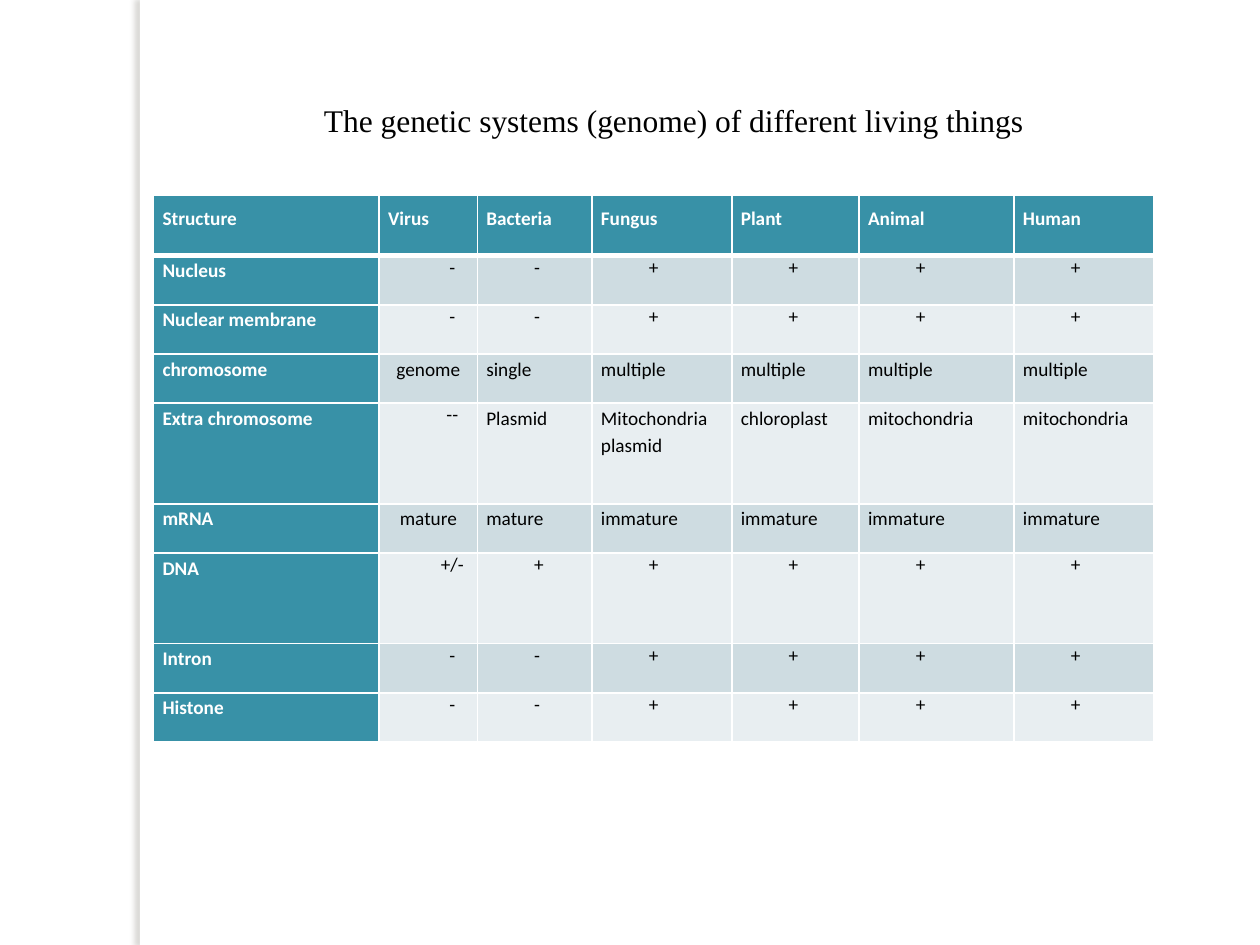
from lxml.etree import SubElement
from pptx import Presentation
from pptx.dml.color import RGBColor
from pptx.enum.shapes import MSO_SHAPE
from pptx.enum.text import MSO_ANCHOR, MSO_AUTO_SIZE, PP_ALIGN
from pptx.oxml import parse_xml
from pptx.oxml.ns import nsdecls, qn
from pptx.util import Inches, Pt

WHITE = RGBColor(0xFF, 0xFF, 0xFF)
BLACK = RGBColor(0x00, 0x00, 0x00)
TEAL = RGBColor(0x38, 0x91, 0xA7)
BAND_DARK = RGBColor(0xCE, 0xDC, 0xE1)
BAND_LIGHT = RGBColor(0xE8, 0xEE, 0xF1)
SHADOW = RGBColor(0x73, 0x6F, 0x63)

COLUMN_WIDTHS = [1.79, 0.78, 0.91, 1.11, 1.01, 1.23, 1.11]
ROW_HEIGHTS = [0.48, 0.39, 0.39, 0.39, 0.8, 0.39, 0.72, 0.39, 0.39]
GENOME_ROWS = [
    ["Structure", "Virus", "Bacteria", "Fungus", "Plant", "Animal", "Human"],
    ["Nucleus", "-", "-", "+", "+", "+", "+"],
    ["Nuclear membrane", "-", "-", "+", "+", "+", "+"],
    ["chromosome", "genome", "single"] + ["multiple"] * 4,
    ["Extra chromosome", "--", "Plasmid", "Mitochondria\nplasmid",
     "chloroplast", "mitochondria", "mitochondria"],
    ["mRNA", "mature", "mature"] + ["immature"] * 4,
    ["DNA", "+/-", "+", "+", "+", "+", "+"],
    ["Intron", "-", "-", "+", "+", "+", "+"],
    ["Histone", "-", "-", "+", "+", "+", "+"],
]
SIGNS = {"-", "--", "+", "+/-"}


class SlideBuilder:
    title_font = "Times New Roman"
    table_font = "Calibri"
    sign_indent = Inches(0.38)

    def __init__(self, slide):
        self.slide = slide

    def add_run(self, paragraph, text, font, size, color, bold=False):
        run = paragraph.add_run()
        run.text = text
        run.font.name = font
        run.font.size = Pt(size)
        run.font.bold = bold
        run.font.color.rgb = color

    def indent(self, paragraph):
        properties = paragraph._p.get_or_add_pPr()
        properties.set("marL", str(self.sign_indent))
        properties.set("indent", "0")

    def add_title(self, text, left, top, width, height):
        title = self.slide.shapes.title
        title.left, title.top = Inches(left), Inches(top)
        title.width, title.height = Inches(width), Inches(height)
        frame = title.text_frame
        frame.word_wrap = True
        frame.auto_size = MSO_AUTO_SIZE.SHAPE_TO_FIT_TEXT
        frame.vertical_anchor = MSO_ANCHOR.TOP
        paragraph = frame.paragraphs[0]
        paragraph.alignment = PP_ALIGN.LEFT
        paragraph.line_spacing = 1.5
        self.indent(paragraph)
        self.add_run(paragraph, text, self.title_font, 18, BLACK)

    def add_side_strip(self, left, top, width, height):
        strip = self.slide.shapes.add_shape(
            MSO_SHAPE.RECTANGLE, Inches(left), Inches(top), Inches(width), Inches(height))
        strip.fill.solid()
        strip.fill.fore_color.rgb = WHITE
        strip.line.fill.background()
        strip.shadow.inherit = False
        # Soft shadow towards the left
        effects = strip.element.spPr.find(qn("a:effectLst"))
        shadow = SubElement(effects, qn("a:outerShdw"), blurRad=str(Pt(3)),
                            dist=str(Pt(3)), dir="10800000", rotWithShape="0")
        color = SubElement(shadow, qn("a:srgbClr"), val=str(SHADOW))
        SubElement(color, qn("a:alpha"), val="25000")
        # Keep the strip behind the title
        self.slide.shapes.title.element.addprevious(strip.element)

    def set_borders(self, cell, top, bottom):
        properties = cell._tc.get_or_add_tcPr()
        sides = [("lnL", 1), ("lnR", 1), ("lnT", top), ("lnB", bottom)]
        for position, (side, width) in enumerate(sides):
            properties.insert(position, parse_xml(
                f'<a:{side} {nsdecls("a")} w="{Pt(width)}"><a:solidFill>'
                f'<a:srgbClr val="{WHITE}"/></a:solidFill></a:{side}>'))

    def fill_cell(self, cell, text, row, column):
        heading = row == 0 or column == 0
        cell.margin_left = cell.margin_right = Inches(0.07)
        cell.margin_top = cell.margin_bottom = 0
        cell.fill.solid()
        cell.fill.fore_color.rgb = TEAL if heading else BAND_DARK if row % 2 else BAND_LIGHT
        self.set_borders(cell, top=3 if row == 1 else 1, bottom=3 if row == 0 else 1)

        frame = cell.text_frame
        for number, line in enumerate(text.split("\n")):
            paragraph = frame.add_paragraph() if number else frame.paragraphs[0]
            if text in SIGNS:
                self.indent(paragraph)
            else:
                paragraph.line_spacing = 1.5 if row == 0 else 1.15
            if column == 1 and not heading:
                paragraph.alignment = PP_ALIGN.CENTER
            self.add_run(paragraph, line, self.table_font, 11,
                         WHITE if heading else BLACK, heading)

    def add_table(self, rows, left, top, widths, heights):
        table = self.slide.shapes.add_table(
            len(rows), len(widths), Inches(left), Inches(top),
            Inches(sum(widths)), Inches(sum(heights))).table
        for column, width in zip(table.columns, widths):
            column.width = Inches(width)
        for row, height in zip(table.rows, heights):
            row.height = Inches(height)
        for row, texts in enumerate(rows):
            for column, text in enumerate(texts):
                self.fill_cell(table.cell(row, column), text, row, column)


def main():
    presentation = Presentation()
    presentation.slide_width, presentation.slide_height = Inches(10), Inches(7.5)
    title_only = presentation.slide_layouts[5]
    builder = SlideBuilder(presentation.slides.add_slide(title_only))

    # Side strip
    builder.add_side_strip(1.11, 0, 0.08, 7.5)
    # Title
    builder.add_title("The genetic systems (genome) of different living things",
                      2.09, 0.6, 6.28, 0.56)
    # Comparison table
    builder.add_table(GENOME_ROWS, 1.22, 1.55, COLUMN_WIDTHS, ROW_HEIGHTS)

    presentation.save("out.pptx")


if __name__ == "__main__":
    main()
